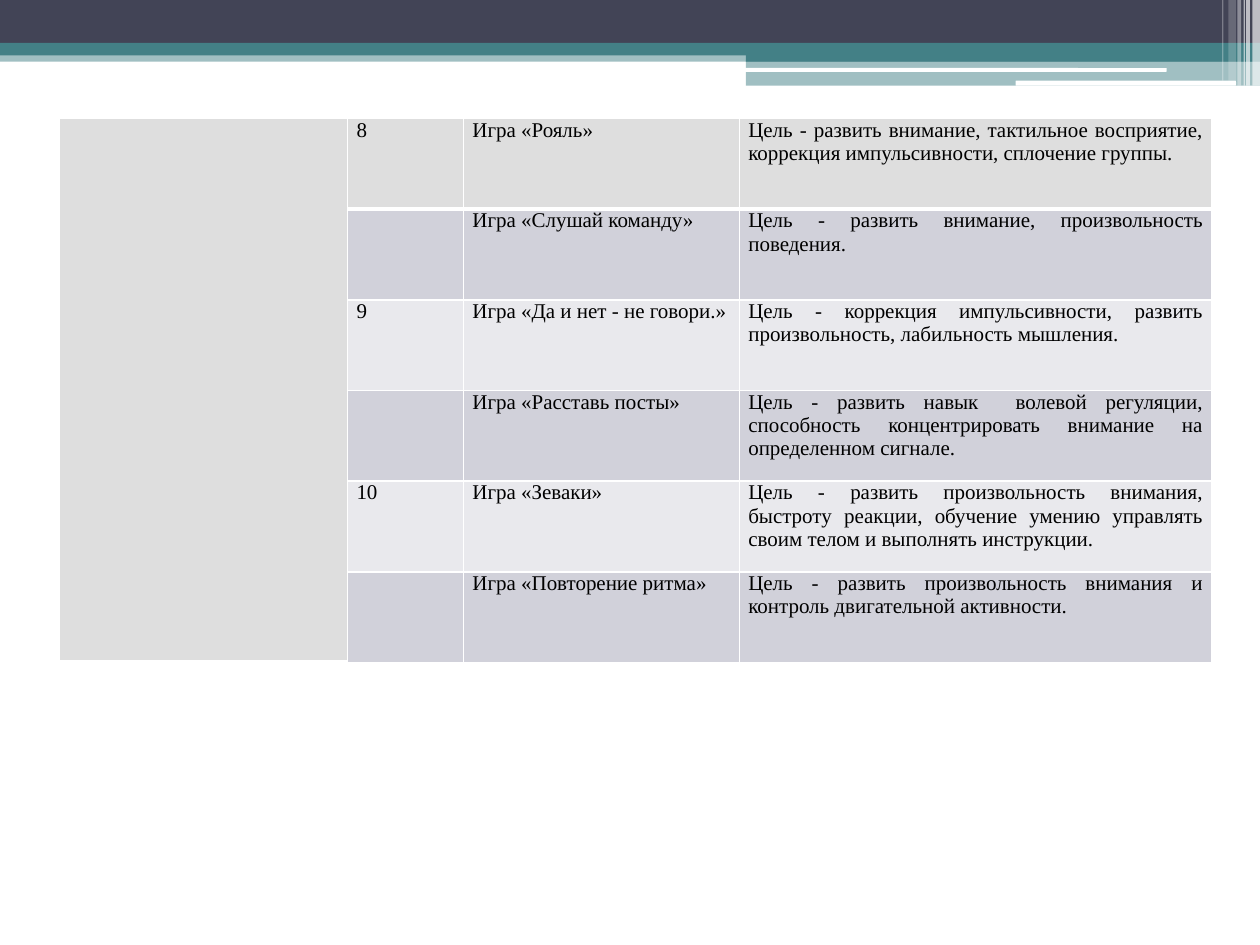
from lxml import etree
from pptx import Presentation
from pptx.dml.color import RGBColor
from pptx.enum.shapes import MSO_SHAPE as Shape
from pptx.enum.text import PP_ALIGN as Align
from pptx.oxml.ns import qn
from pptx.util import Inches, Pt

DARK, TEAL, WHITE, BLACK = "424456", "438086", "FFFFFF", "000000"
FONT = "Times New Roman"

BANDS = [
    (0, 0.4, 10, 0.09, TEAL, 50),
    (0, 0, 10, 0.34, DARK, 100),
    (0, 0.34, 10, 0.1, TEAL, 100),
    (5.92, 0.39, 4.08, 0.1, TEAL, 100),
    (5.92, 0.48, 4.08, 0.2, TEAL, 50),
]
ROUNDED_BARS = [
    (5.91, 0.54, 3.35, 0.03, WHITE, 100),
    (8.06, 0.64, 1.75, 0.04, WHITE, 100),
]
STRIPES = [
    (9.94, 0.06, 0.68, 65),
    (9.89, 0.03, 0.68, 65),
    (9.87, 0.01, 0.68, 60),
    (9.82, 0.03, 0.68, 40),
    (9.75, 0.06, 0.64, 20),
    (9.7, 0.01, 0.64, 30),
]

GAMES = [
    ("8", "Игра «Рояль»",
     "Цель - развить внимание, тактильное восприятие, коррекция импульсивности, сплочение группы."),
    ("", "Игра «Слушай команду»",
     "Цель - развить внимание, произвольность поведения."),
    ("9", "Игра «Да и нет - не говори.»",
     "Цель - коррекция импульсивности, развить произвольность, лабильность мышления."),
    ("", "Игра «Расставь посты»",
     "Цель - развить навык  волевой регуляции, способность концентрировать внимание на определенном сигнале."),
    ("10", "Игра «Зеваки»",
     "Цель - развить произвольность внимания, быстроту реакции, обучение умению управлять своим телом и выполнять инструкции."),
    ("", "Игра «Повторение ритма»",
     "Цель - развить произвольность внимания и контроль двигательной активности."),
]
COLUMN_WIDTHS = [2.29, 0.92, 2.19, 3.75]
ROW_HEIGHT = 0.72
HEADER_FILL, ROW_FILLS = "DEDEDE", ["E9E9ED", "D1D1DA"]


def paint(fill, color, opacity=100):
    fill.solid()
    fill.fore_color.rgb = RGBColor.from_string(color)
    if opacity < 100:
        color_node = fill._xPr.find(qn("a:solidFill"))[0]
        etree.SubElement(color_node, qn("a:alpha")).set("val", str(opacity * 1000))


def add_bar(slide, kind, left, top, width, height, color, opacity):
    bar = slide.shapes.add_shape(
        kind, Inches(left), Inches(top), Inches(width), Inches(height))
    bar.shadow.inherit = False
    bar.line.fill.background()
    paint(bar.fill, color, opacity)


def set_borders(cell, bottom_width):
    properties = cell._tc.get_or_add_tcPr()
    widths = {"lnL": 1, "lnR": 1, "lnT": 1, "lnB": bottom_width}
    for position, (side, width) in enumerate(widths.items()):
        border = etree.Element(qn(f"a:{side}"), w=str(Pt(width)))
        solid = etree.SubElement(border, qn("a:solidFill"))
        etree.SubElement(solid, qn("a:srgbClr"), val=WHITE)
        properties.insert(position, border)


def fill_cell(cell, text, color, bottom_width):
    cell.margin_left = cell.margin_right = Inches(0.07)
    cell.margin_top = cell.margin_bottom = 0
    paint(cell.fill, color)
    set_borders(cell, bottom_width)
    paragraph = cell.text_frame.paragraphs[0]
    paragraph.text = text
    paragraph.alignment = Align.JUSTIFY
    paragraph.font.size = Pt(12)
    paragraph.font.name = FONT
    paragraph.font.color.rgb = RGBColor.from_string(BLACK)


def add_games(slide):
    table = slide.shapes.add_table(
        len(GAMES), len(COLUMN_WIDTHS), Inches(0.47), Inches(0.94),
        Inches(sum(COLUMN_WIDTHS)), Inches(ROW_HEIGHT * len(GAMES))).table
    table.first_row = table.horz_banding = False
    for column, width in zip(table.columns, COLUMN_WIDTHS):
        column.width = Inches(width)
    for index, game in enumerate(GAMES):
        table.rows[index].height = Inches(ROW_HEIGHT)
        row_fill = ROW_FILLS[index % 2] if index else HEADER_FILL
        for column, text in enumerate(("", *game)):
            color = row_fill if column else HEADER_FILL
            fill_cell(table.cell(index, column), text, color, 1 if index else 3)
    table.cell(0, 0).merge(table.cell(len(GAMES) - 1, 0))


def main():
    deck = Presentation()
    deck.slide_width, deck.slide_height = Inches(10), Inches(7.5)
    slide = deck.slides.add_slide(deck.slide_layouts[6])
    for band in BANDS:
        add_bar(slide, Shape.RECTANGLE, *band)
    for bar in ROUNDED_BARS:
        add_bar(slide, Shape.ROUNDED_RECTANGLE, *bar)
    for left, width, height, opacity in STRIPES:
        add_bar(slide, Shape.RECTANGLE, left, 0, width, height, WHITE, opacity)
    add_games(slide)
    deck.save("out.pptx")


if __name__ == "__main__":
    main()
